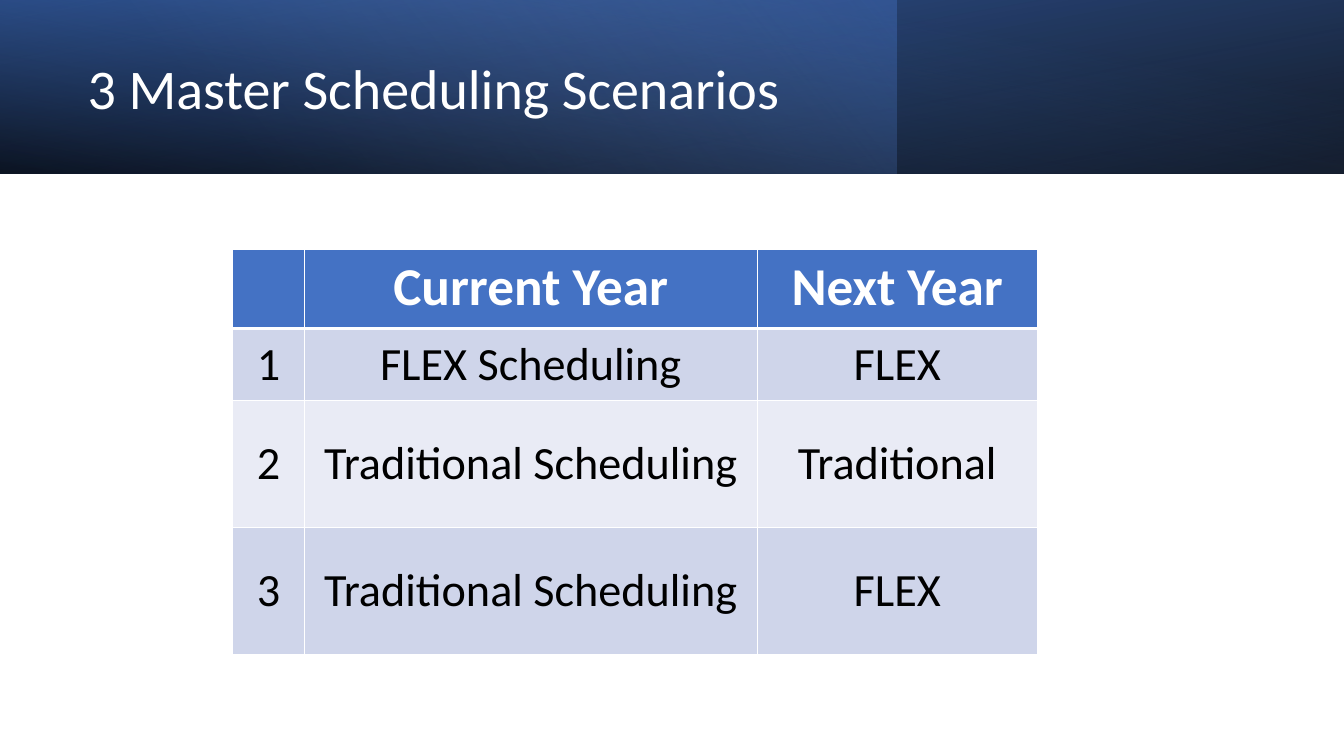
from lxml.etree import SubElement
from pptx import Presentation
from pptx.dml.color import RGBColor
from pptx.enum.shapes import MSO_SHAPE as Shape
from pptx.enum.text import MSO_ANCHOR as Anchor, PP_ALIGN as Align
from pptx.oxml.ns import qn
from pptx.util import Inches, Pt

COLORS = {
    "white": "FFFFFF", "black": "000000", "blue": "4472C4", "navy": "2F5597",
    "sky": "8FAADC", "band": "CFD5EA", "pale": "E9EBF5",
}
FONT = "Calibri"


def add_solid(parent, color, opacity=100):
    """Append an sRGB colour with an opacity in percent."""
    tone = SubElement(parent, qn("a:srgbClr"), val=COLORS[color])
    if opacity < 100:
        SubElement(tone, qn("a:alpha"), val=str(opacity * 1000))


def style_span(span, size, color, bold=False):
    span.font.name = FONT
    span.font.size = Pt(size)
    span.font.bold = bold
    span.font.color.rgb = RGBColor.from_string(COLORS[color])


deck = Presentation()
deck.slide_width, deck.slide_height = Inches(13.33), Inches(7.5)
page = deck.slides.add_slide(deck.slide_layouts[6])

# Header: three layered gradients (width, rotation, flipped, angle, stops)
layers = [
    (13.33, 180, True, 100, [(0, "black", 96), (100, "navy", 100)]),
    (8.89, 0, False, 140, [(0, "blue", 41), (74, "sky", 0)]),
    (13.33, 0, True, 260, [(0, "black", 63), (78, "blue", 15)]),
]
for width, rotation, flipped, angle, stops in layers:
    layer = page.shapes.add_shape(Shape.RECTANGLE, 0, 0, Inches(width), Inches(1.72))
    layer.shadow.inherit = False
    layer.line.fill.background()
    layer.rotation = rotation
    properties = layer._element.spPr
    if flipped:
        properties.xfrm.set("flipH", "1")
    gradient = SubElement(properties, qn("a:gradFill"), rotWithShape="1")
    properties.find(qn("a:prstGeom")).addnext(gradient)
    stop_list = SubElement(gradient, qn("a:gsLst"))
    for position, color, opacity in stops:
        stop = SubElement(stop_list, qn("a:gs"), pos=str(position * 1000))
        add_solid(stop, color, opacity)
    SubElement(gradient, qn("a:lin"), ang=str(angle * 60000), scaled="0")

# Title
box = page.shapes.add_textbox(Inches(0.77), Inches(0.27), Inches(7.72), Inches(1.27))
box.text_frame.word_wrap = True
box.text_frame.vertical_anchor = Anchor.MIDDLE
para = box.text_frame.paragraphs[0]
para.text = "3 Master Scheduling Scenarios"
para.line_spacing = 0.9
para.space_after = Pt(6)
style_span(para.runs[0], 40, "white")

# Scenario table
rows = [
    ("", "Current Year", "Next Year"),
    ("1", "FLEX Scheduling", "FLEX"),
    ("2", "Traditional Scheduling", "Traditional"),
    ("3", "Traditional Scheduling", "FLEX"),
]
table = page.shapes.add_table(
    4, 3, Inches(2.31), Inches(2.47), Inches(7.98), Inches(4.02)).table
for column, width in zip(table.columns, [0.71, 4.49, 2.78]):
    column.width = Inches(width)
for row, height in zip(table.rows, [0.79, 0.71, 1.26, 1.26]):
    row.height = Inches(height)

for r, texts in enumerate(rows):
    header = r == 0
    fill = "blue" if header else "band" if r % 2 else "pale"
    for c, text in enumerate(texts):
        cell = table.cell(r, c)
        cell.margin_left = cell.margin_right = Inches(0.12)
        cell.margin_top = cell.margin_bottom = Inches(0.06)
        cell.vertical_anchor = Anchor.TOP if header else Anchor.MIDDLE
        # White borders, thicker between header and body
        for side in "LRTB":
            thick = (r, side) in [(0, "B"), (1, "T")]
            border = SubElement(cell._tc.get_or_add_tcPr(), qn(f"a:ln{side}"),
                                w=str(Pt(3 if thick else 1)))
            add_solid(SubElement(border, qn("a:solidFill")), "white")
        cell.fill.solid()
        cell.fill.fore_color.rgb = RGBColor.from_string(COLORS[fill])
        para = cell.text_frame.paragraphs[0]
        para.text = text
        para.alignment = Align.CENTER
        for span in para.runs:
            style_span(span, 38 if header else 33, "white" if header else "black", header)

deck.save("out.pptx")
